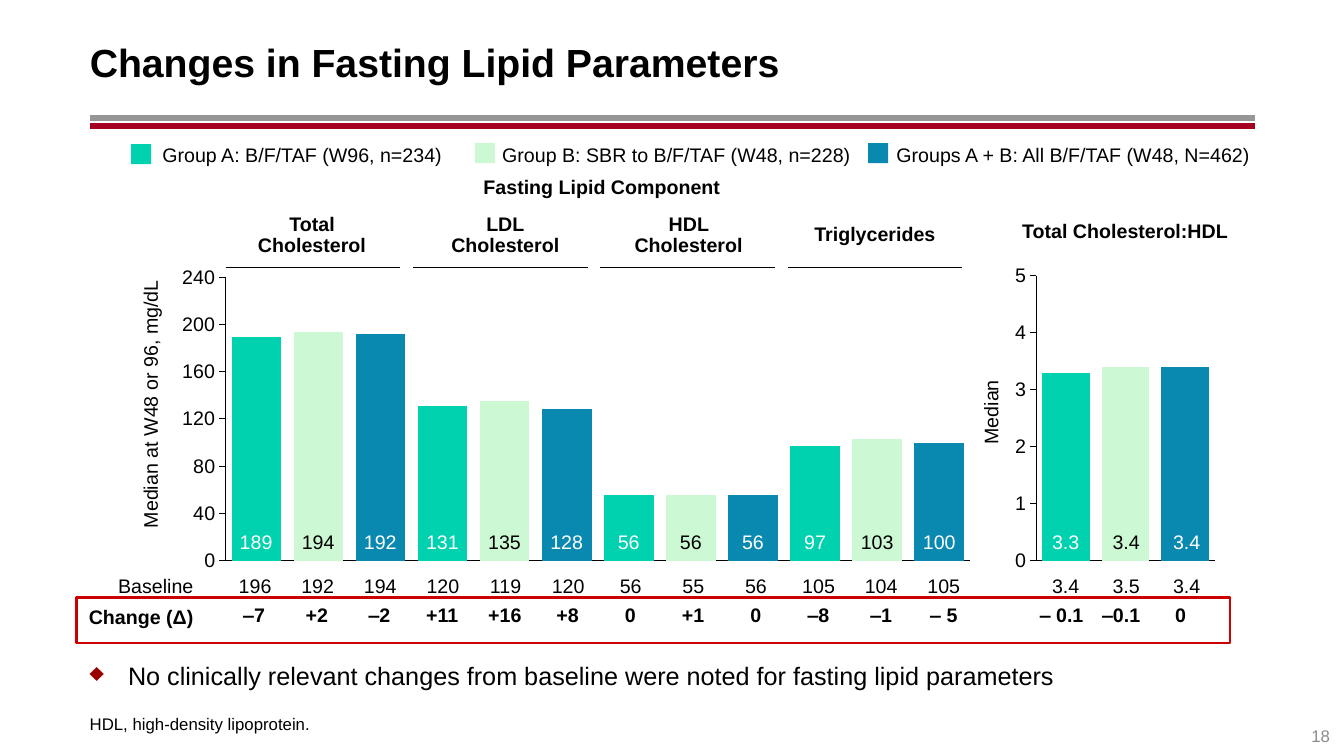
from lxml.etree import SubElement
from pptx import Presentation
from pptx.chart.data import CategoryChartData
from pptx.dml.color import RGBColor
from pptx.enum.chart import XL_CHART_TYPE as ChartType, XL_TICK_LABEL_POSITION as LabelPosition, XL_TICK_MARK as TickMark
from pptx.enum.shapes import MSO_CONNECTOR as Connector, MSO_SHAPE as Shape
from pptx.enum.text import MSO_ANCHOR as Anchor, MSO_AUTO_SIZE as AutoSize, PP_ALIGN as Align
from pptx.oxml import parse_xml
from pptx.oxml.ns import nsdecls, qn
from pptx.util import Inches, Pt

BLACK = RGBColor(0x00, 0x00, 0x00)
WHITE = RGBColor(0xFF, 0xFF, 0xFF)
GRAY = RGBColor(0x96, 0x96, 0x96)
PAGE_GRAY = RGBColor(0x8C, 0x8C, 0x8C)
CRIMSON = RGBColor(0xA5, 0x00, 0x21)
RED = RGBColor(0xCC, 0x00, 0x00)
TEAL = RGBColor(0x00, 0xD2, 0xAF)
MINT = RGBColor(0xCD, 0xF8, 0xD4)
BLUE = RGBColor(0x09, 0x88, 0xB0)
GROUP_COLORS = (TEAL, MINT, BLUE)
VALUE_COLORS = (WHITE, BLACK, WHITE)
FONT = "Arial"

LIPIDS = {
    "medians": (189, 194, 192, 131, 135, 128, 56, 56, 56, 97, 103, 100),
    "baselines": (196, 192, 194, 120, 119, 120, 56, 55, 56, 105, 104, 105),
    "changes": ("‒7", "+2", "‒2", "+11", "+16", "+8", "0", "+1", "0", "‒8", "‒1", "‒ 5"),
}
RATIO = {
    "medians": (3.3, 3.4, 3.4),
    "baselines": (3.4, 3.5, 3.4),
    "changes": ("‒ 0.1", "‒0.1", "0"),
}
HEADINGS = (("Total Cholesterol", 0), ("LDL\vCholesterol", 0.06),
            ("HDL Cholesterol", 0.02), ("Triglycerides", 0.01))
LEGEND = (("Group A: B/F/TAF (W96, n=234)", 0, 0.31, 0.03),
          ("Group B: SBR to B/F/TAF (W48, n=228)", 3.41, 0.27, 0.02),
          ("Groups A + B: All B/F/TAF (W48, N=462)", 7.31, 0.28, 0.02))


def format_text(frame, text, size=14, color=BLACK, bold=False, align=Align.LEFT,
                anchor=Anchor.MIDDLE, insets=(0, 0), spacing=None, wrap=True):
    frame.text = text
    frame.auto_size = AutoSize.NONE
    frame.word_wrap = wrap
    frame.vertical_anchor = anchor
    frame.margin_left = frame.margin_right = Inches(insets[0])
    frame.margin_top = frame.margin_bottom = Inches(insets[1])
    paragraph = frame.paragraphs[0]
    paragraph.alignment = align
    if spacing:
        paragraph.line_spacing = spacing
    for run in paragraph.runs:
        run.font.name = FONT
        run.font.size = Pt(size)
        run.font.bold = bold
        run.font.color.rgb = color
    return paragraph


def add_text(slide, box, text, **style):
    label = slide.shapes.add_textbox(*map(Inches, box))
    format_text(label.text_frame, text, **style)
    return label


def add_rule(slide, left, top, width, color, weight):
    rule = slide.shapes.add_connector(
        Connector.STRAIGHT, Inches(left), Inches(top), Inches(left + width), Inches(top))
    rule.line.color.rgb = color
    rule.line.width = Pt(weight)
    SubElement(rule._element.spPr, qn("a:effectLst"))


def add_block(slide, box, fill=None, line=None):
    block = slide.shapes.add_shape(Shape.RECTANGLE, *map(Inches, box))
    block.shadow.inherit = False
    if fill is None:
        block.fill.background()
    else:
        block.fill.solid()
        block.fill.fore_color.rgb = fill
    if line is None:
        block.line.fill.background()
    else:
        block.line.color.rgb = line
        block.line.width = Pt(2)
    return block


def build_header(slide, box):
    left, top, width, height = box
    for offset, color in ((0.13, GRAY), (0.21, CRIMSON)):
        add_rule(slide, left, top + height + offset, width, color, 4.25)
    title = slide.shapes.title
    title.left, title.top, title.width, title.height = map(Inches, box)
    format_text(title.text_frame, "Changes in Fasting Lipid Parameters",
                size=28, bold=True, insets=(0, 0.05))


def build_legend(slide, box):
    left, top, width, height = box
    for (group, offset, gap, drop), color in zip(LEGEND, GROUP_COLORS):
        add_block(slide, (left + offset, top + drop - 0.01, 0.2, 0.2), fill=color)
        add_text(slide, (left + offset + gap, top, width, height), group)


def build_chart(slide, box, medians, plot, maximum, major):
    data = CategoryChartData()
    data.categories = [str(number + 1) for number in range(len(medians))]
    data.add_series("Median", medians)
    chart = slide.shapes.add_chart(ChartType.COLUMN_STACKED, *map(Inches, box), data).chart
    chart.has_title = chart.has_legend = False
    chart.font.name = FONT
    chart.font.size = Pt(14)
    chart.font.color.rgb = BLACK
    for axis in (chart.category_axis, chart.value_axis):
        axis.has_major_gridlines = False
        axis.major_tick_mark = axis.minor_tick_mark = TickMark.NONE
        axis.format.line.color.rgb = BLACK
        axis.format.line.width = Pt(0.75)
    chart.category_axis.tick_label_position = LabelPosition.NONE
    scale = chart.value_axis
    scale.major_tick_mark = TickMark.OUTSIDE
    scale.minimum_scale, scale.maximum_scale, scale.major_unit = 0, maximum, major
    scale.tick_labels.number_format = "0"
    scale.tick_labels.number_format_is_linked = False
    bars = chart.plots[0]
    bars.gap_width, bars.overlap, bars.vary_by_categories = 25, 100, False
    for index in range(len(medians)):
        fill = bars.series[0].points[index].format.fill
        fill.solid()
        fill.fore_color.rgb = GROUP_COLORS[index % 3]
    area = chart._chartSpace.chart.plotArea
    for layout in area.findall(qn("c:layout")):
        area.remove(layout)
    places = "".join(f'<c:{key} val="{value}"/>' for key, value in zip("xywh", plot))
    area.insert(0, parse_xml(
        f'<c:layout {nsdecls("c")}><c:manualLayout><c:layoutTarget val="inner"/>'
        f'<c:xMode val="edge"/><c:yMode val="edge"/>{places}</c:manualLayout></c:layout>'))


def build_axis_title(slide, box, text):
    title = add_text(slide, box, text, align=Align.CENTER, anchor=Anchor.BOTTOM,
                     insets=(0.1, 0.05), wrap=False)
    title.rotation = 270


def build_headings(slide, box):
    left, top, width, height = box
    component = add_block(slide, (left + 1.62, top - 0.41, 4.22, 0.41), fill=WHITE)
    format_text(component.text_frame, "Fasting Lipid Component", bold=True,
                align=Align.CENTER, insets=(0.1, 0.1), spacing=0.9)
    step = width / len(HEADINGS)
    for index, (heading, nudge) in enumerate(HEADINGS):
        start = left + index * step
        add_text(slide, (start + nudge, top, 1.71, height), heading, bold=True,
                 align=Align.CENTER, insets=(0.1, 0.05), spacing=0.9)
        add_rule(slide, start, top + 0.58, 1.73, BLACK, 0.75)


def build_row(slide, box, values, step, colors=(BLACK,), **style):
    left, top, width, height = box
    for index, value in enumerate(values):
        add_text(slide, (left + index * step, top, width, height), str(value),
                 color=colors[index % len(colors)], align=Align.CENTER, **style)


def build_rows(slide, box, results, lefts, steps):
    left, top, width, height = box
    bottom = Anchor.BOTTOM
    offsets = [left + offset for offset in lefts]
    build_row(slide, (offsets[0], top, width, height), results["medians"], steps[0],
              VALUE_COLORS, anchor=bottom)
    build_row(slide, (offsets[1], top + 0.44, width, height), results["baselines"], steps[1],
              anchor=bottom)
    build_row(slide, (offsets[2], top + 0.74, 0.5, height), results["changes"], steps[2],
              bold=True, spacing=0.9, wrap=False)


def build_row_labels(slide, box):
    left, top, width, height = box
    for label, drop, bold in (("Baseline", 0, False), ("Change (Δ)", 0.3, True)):
        add_text(slide, (left, top + drop, width, height), label, bold=bold,
                 align=Align.RIGHT, anchor=Anchor.BOTTOM)


def build_conclusion(slide, box):
    finding = add_text(slide, box,
                       "No clinically relevant changes from baseline were noted for fasting lipid parameters",
                       size=18, anchor=Anchor.TOP, insets=(0, 0.05))
    paragraph = finding.text_frame.paragraphs[0]
    paragraph.space_before = Pt(9)
    properties = paragraph._p.get_or_add_pPr()
    properties.set("marL", str(Inches(0.38)))
    properties.set("indent", str(Inches(-0.38)))
    bullet_color = SubElement(properties, qn("a:buClr"))
    SubElement(bullet_color, qn("a:srgbClr")).set("val", "990000")
    SubElement(properties, qn("a:buChar")).set("char", "♦")


def main():
    deck = Presentation()
    deck.slide_width, deck.slide_height = Inches(13.33), Inches(7.5)
    slide = deck.slides.add_slide(deck.slide_layouts[5])
    build_header(slide, (0.89, 0.18, 11.56, 0.86))
    build_conclusion(slide, (0.89, 6.5, 11.56, 0.58))
    add_text(slide, (0.89, 6.83, 11.56, 0.5), "HDL, high-density lipoprotein.",
             size=12, anchor=Anchor.BOTTOM, insets=(0, 0.05))
    add_text(slide, (12.44, 7.1, 0.85, 0.4), "18", size=12, color=PAGE_GRAY,
             align=Align.RIGHT, insets=(0.1, 0.05))
    build_chart(slide, (9.91, 2.28, 2.29, 3.46), RATIO["medians"],
                (0.16, 0.132, 0.774, 0.817), 5, 1)
    build_chart(slide, (1.65, 2.28, 8.12, 3.46), LIPIDS["medians"],
                (0.072, 0.136, 0.91, 0.813), 240, 40)
    build_axis_title(slide, (9.4, 3.92, 0.84, 0.34), "Median")
    build_axis_title(slide, (0.15, 3.84, 2.67, 0.34), "Median at W48 or 96, mg/dL")
    add_text(slide, (9.88, 2.07, 2.56, 0.44), "Total Cholesterol:HDL", bold=True,
             align=Align.CENTER, insets=(0.1, 0.1))
    build_headings(slide, (2.24, 2.07, 7.43, 0.53))
    build_rows(slide, (2.27, 5.25, 0.48, 0.24), LIPIDS, (0.03, 0.02, 0), (0.616, 0.621, 0.622))
    build_rows(slide, (10.28, 5.25, 0.5, 0.24), RATIO, (0.04, 0.04, 0), (0.6, 0.6, 0.59))
    build_row_labels(slide, (0.62, 5.69, 1.3, 0.24))
    build_legend(slide, (1.3, 1.41, 3.99, 0.24))
    add_block(slide, (0.76, 5.93, 11.44, 0.45), line=RED)
    deck.save("out.pptx")


if __name__ == "__main__":
    main()
